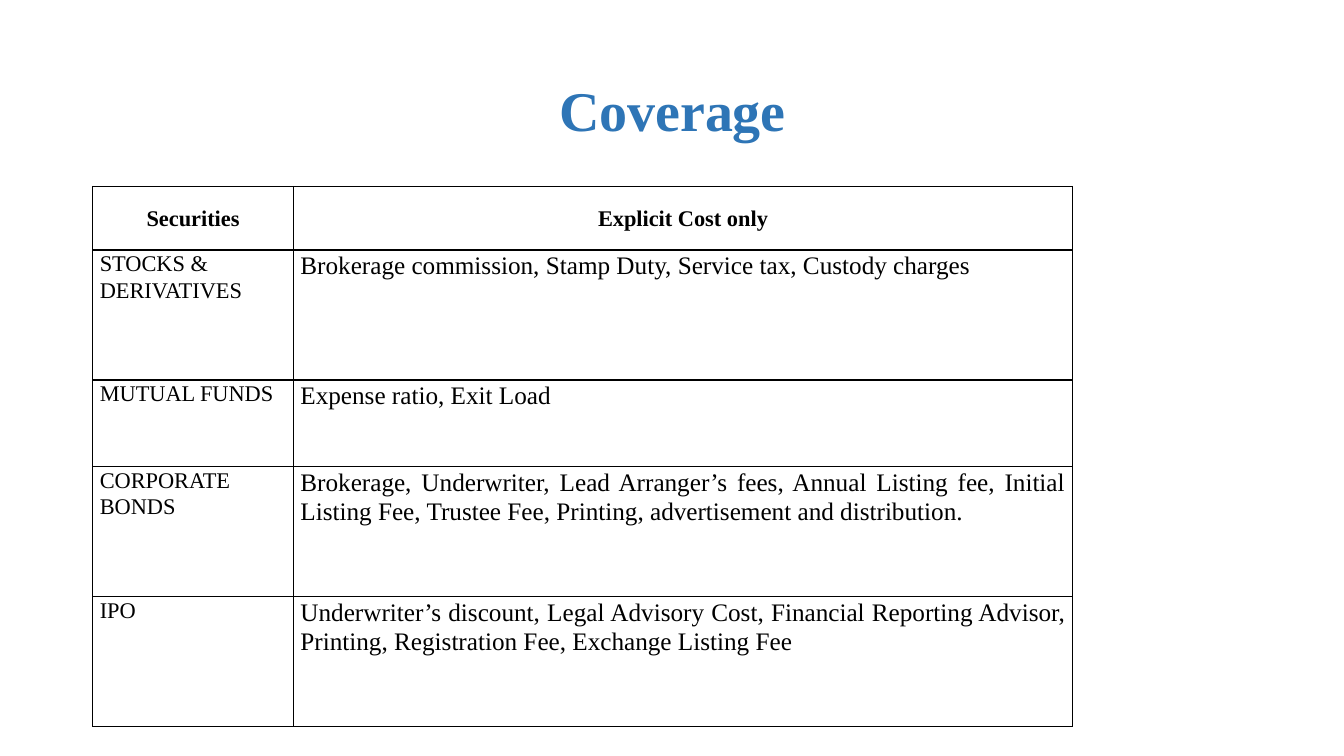
from lxml.etree import SubElement
from pptx import Presentation
from pptx.dml.color import RGBColor
from pptx.enum.text import MSO_ANCHOR, PP_ALIGN
from pptx.oxml.ns import qn
from pptx.util import Inches, Pt

FONT = "Times New Roman"
BLUE = "2E75B6"
BLACK = "000000"
COLUMN_WIDTHS = [1.99, 7.73]
ROW_HEIGHTS = [0.63, 1.29, 0.86, 1.29, 1.29]
HEADINGS = ("Securities", "Explicit Cost only")
COSTS = [
    ("STOCKS & DERIVATIVES",
     "Brokerage commission, Stamp Duty, Service tax, Custody charges"),
    ("MUTUAL FUNDS", "Expense ratio, Exit Load"),
    ("CORPORATE BONDS",
     "Brokerage, Underwriter, Lead Arranger’s fees, Annual Listing fee, Initial "
     "Listing Fee, Trustee Fee, Printing, advertisement and distribution. "),
    ("IPO",
     "Underwriter’s discount, Legal Advisory Cost, Financial Reporting Advisor, "
     "Printing, Registration Fee, Exchange Listing Fee"),
]


def color(hex_string):
    """Turn a hex string into a colour."""
    return RGBColor.from_string(hex_string)


def write(frame, text, size, hex_string, bold, align, spacing):
    """Write one formatted run into the first paragraph of a text frame."""
    paragraph = frame.paragraphs[0]
    paragraph.alignment = align
    paragraph.line_spacing = spacing
    run = paragraph.add_run()
    run.text = text
    run.font.name = FONT
    run.font.size = Pt(size)
    run.font.bold = bold
    run.font.color.rgb = color(hex_string)


def outline(cell, hex_string, width):
    """Draw a solid border on all four sides of a cell."""
    properties = cell._tc.get_or_add_tcPr()
    for side in ("a:lnL", "a:lnR", "a:lnT", "a:lnB"):
        border = SubElement(properties, qn(side), w=str(Pt(width)))
        fill = SubElement(border, qn("a:solidFill"))
        SubElement(fill, qn("a:srgbClr"), val=hex_string)


def add_title(slide, left, top, width, height):
    """Place the centred slide title in its box."""
    title = slide.shapes.add_textbox(
        Inches(left), Inches(top), Inches(width), Inches(height)).text_frame
    title.word_wrap = True
    title.vertical_anchor = MSO_ANCHOR.MIDDLE
    write(title, "Coverage", 40, BLUE, True, PP_ALIGN.CENTER, 0.9)


def add_cost_table(slide, left, top, width, height):
    """Place the table of securities and their explicit costs in its box."""
    rows = [HEADINGS, *COSTS]
    table = slide.shapes.add_table(
        len(rows), len(HEADINGS), Inches(left), Inches(top),
        Inches(width), Inches(height)).table
    table.horz_banding = False
    for column, column_width in zip(table.columns, COLUMN_WIDTHS):
        column.width = Inches(column_width)
    for row, row_height in zip(table.rows, ROW_HEIGHTS):
        row.height = Inches(row_height)

    for row_index, texts in enumerate(rows):
        is_heading = row_index == 0
        body_styles = [(16, PP_ALIGN.LEFT), (18, PP_ALIGN.JUSTIFY)]
        styles = [(16, PP_ALIGN.CENTER)] * 2 if is_heading else body_styles
        for column_index, (text, (size, align)) in enumerate(zip(texts, styles)):
            cell = table.cell(row_index, column_index)
            cell.margin_left = cell.margin_right = Inches(0.07)
            cell.margin_top = cell.margin_bottom = 0
            cell.vertical_anchor = MSO_ANCHOR.MIDDLE if is_heading else MSO_ANCHOR.TOP
            outline(cell, BLACK, 1)
            cell.fill.background()
            write(cell.text_frame, text, size, BLACK, is_heading, align, 1.07)


def main():
    """Build and save the coverage slide."""
    presentation = Presentation()
    presentation.slide_width = Inches(13.33)
    presentation.slide_height = Inches(7.5)
    slide = presentation.slides.add_slide(presentation.slide_layouts[6])
    add_title(slide, 0.92, 0.4, 11.5, 1.45)
    add_cost_table(slide, 0.92, 1.85, sum(COLUMN_WIDTHS), sum(ROW_HEIGHTS))
    presentation.save("out.pptx")


if __name__ == "__main__":
    main()
